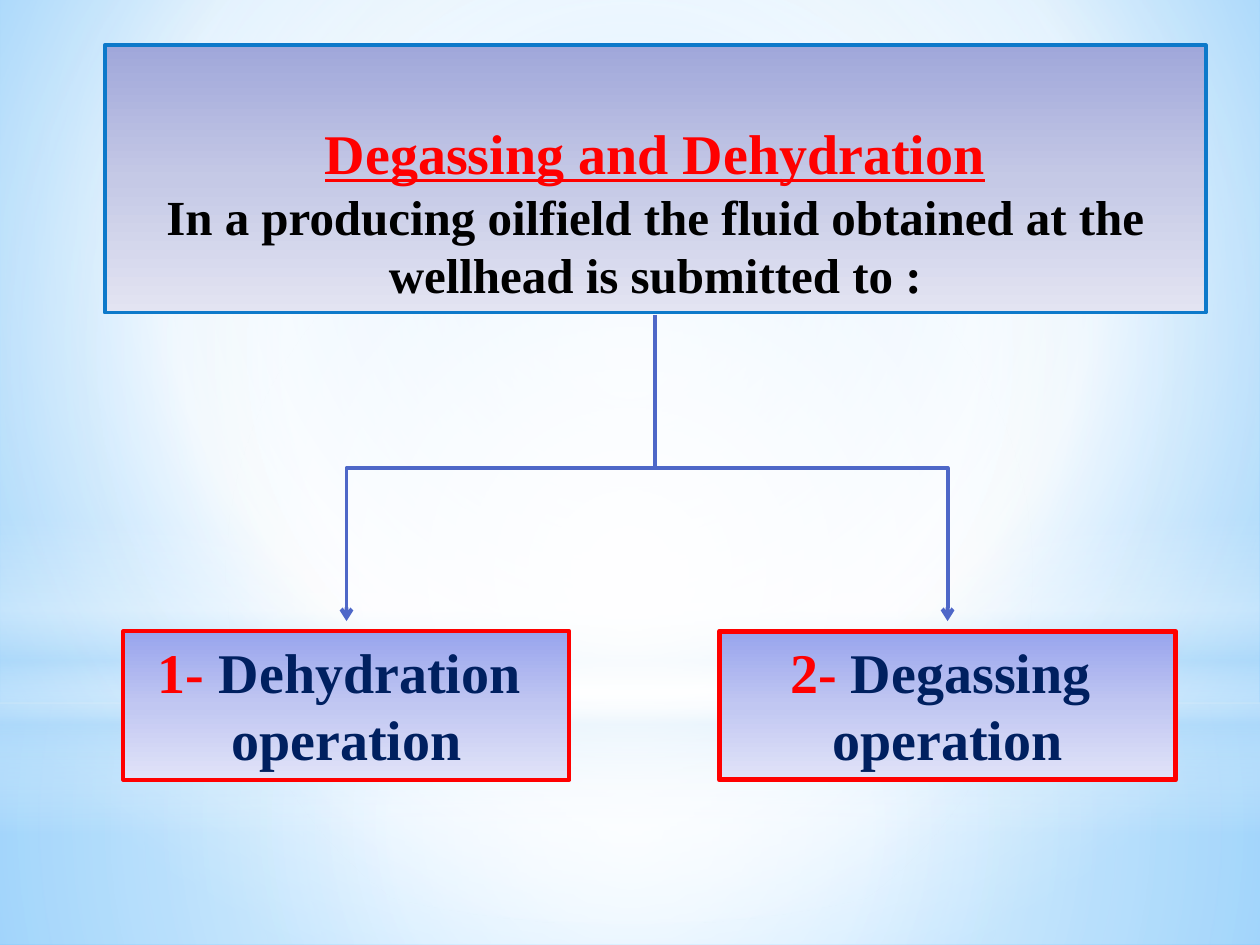
from lxml.etree import SubElement
from pptx import Presentation
from pptx.dml.color import RGBColor
from pptx.enum.shapes import MSO_CONNECTOR, MSO_SHAPE
from pptx.enum.text import MSO_ANCHOR, MSO_AUTO_SIZE, PP_ALIGN
from pptx.oxml.ns import qn
from pptx.util import Inches, Pt

SLIDE_WIDTH, SLIDE_HEIGHT = Inches(10), Inches(7.5)
COLUMNS, ROWS = 100, 75
FONT = "Times New Roman"

WHITE = RGBColor(0xFF, 0xFF, 0xFF)
BLACK = RGBColor(0x00, 0x00, 0x00)
RED = RGBColor(0xFF, 0x00, 0x00)
NAVY = RGBColor(0x00, 0x20, 0x60)
SKY = RGBColor(0x9E, 0xD5, 0xFF)
DEEP_SKY = RGBColor(0x5B, 0xB9, 0xFF)
PALE_BLUE = RGBColor(0xB4, 0xDC, 0xFA)
TITLE_BORDER = RGBColor(0x0D, 0x79, 0xCA)
ARROW_BLUE = RGBColor(0x4E, 0x67, 0xC8)

TITLE_STOPS = [(0, RGBColor(0xA0, 0xA7, 0xDA)), (50, RGBColor(0xC5, 0xC9, 0xE6)),
               (100, RGBColor(0xE3, 0xE4, 0xF2))]
OPERATION_STOPS = [(0, RGBColor(0x98, 0xA4, 0xED)), (50, RGBColor(0xC1, 0xC7, 0xF2)),
                   (100, RGBColor(0xE1, 0xE3, 0xF8))]
BACKGROUND_STOPS = [(0, SKY), (60, WHITE), (100, DEEP_SKY)]
CENTRE = (50, 50, 50, 50)
BACKDROPS = [
    (MSO_SHAPE.RECTANGLE, (0, 55.8, 100, 19.2), CENTRE,
     [(0, WHITE, 91), (37, WHITE, 76), (100, PALE_BLUE, 79)]),
    (MSO_SHAPE.RECTANGLE, (0, 0, 100, 55.8), CENTRE,
     [(0, WHITE, 89), (48, WHITE, 62), (100, PALE_BLUE, 79)]),
    (MSO_SHAPE.RECTANGLE, (0, 41.2, 100, 25), None,
     [(0, WHITE, 0), (29, WHITE, 30), (45, PALE_BLUE, 40),
      (55, WHITE, 26), (65, PALE_BLUE, 60), (100, WHITE, 0)]),
    (MSO_SHAPE.OVAL, (0, 17.5, 100, 55.8), CENTRE,
     [(0, WHITE, 100), (56, WHITE, 0)]),
]
TITLE_AREA = (8.3, 3.6, 87.4, 21.2)
OPERATIONS = [
    ("2-", " Degassing ", (57.1, 50.1, 36.2, 11.8), 3),
    ("1-", " Dehydration ", (9.8, 50.1, 35.4, 11.8), 2.25),
]
ARROW_START, ARROW_END = (52, 25), 49.3


def column(count):
    return round(SLIDE_WIDTH * count / COLUMNS)


def row(count):
    return round(SLIDE_HEIGHT * count / ROWS)


def place(area):
    left, top, width, height = area
    return column(left), row(top), column(width), row(height)


def set_gradient(fill, owner, stops, focus=None):
    fill.solid()
    solid = next(owner.iter(qn("a:solidFill")))
    gradient = solid.makeelement(qn("a:gradFill"), {"rotWithShape": "1"})
    stop_list = SubElement(gradient, qn("a:gsLst"))
    for position, color, *opacity in stops:
        stop = SubElement(stop_list, qn("a:gs"), pos=str(position * 1000))
        stop_color = SubElement(stop, qn("a:srgbClr"), val=str(color))
        if opacity:
            SubElement(stop_color, qn("a:alpha"), val=str(opacity[0] * 1000))
    if focus:
        circle = SubElement(gradient, qn("a:path"), {"path": "circle"})
        sides = {side: str(share * 1000) for side, share in zip("ltrb", focus)}
        SubElement(circle, qn("a:fillToRect"), sides)
    else:
        SubElement(gradient, qn("a:lin"), ang="5400000", scaled="0")
    solid.getparent().replace(solid, gradient)


def add_backdrop(slide, kind, area, focus, stops):
    shape = slide.shapes.add_shape(kind, *place(area))
    shape.shadow.inherit = False
    shape.line.fill.background()
    set_gradient(shape.fill, shape._element.spPr, stops, focus)


def style_box(shape, stops, border, border_width):
    set_gradient(shape.fill, shape._element.spPr, stops)
    shape.line.color.rgb = border
    shape.line.width = Pt(border_width)
    frame = shape.text_frame
    frame.word_wrap = True
    frame.auto_size = MSO_AUTO_SIZE.SHAPE_TO_FIT_TEXT
    frame.vertical_anchor = MSO_ANCHOR.TOP


def add_run(paragraph, text, size, color, underline=False):
    paragraph.alignment = PP_ALIGN.CENTER
    run = paragraph.add_run()
    run.text = text
    run.font.name = FONT
    run.font.size = Pt(size)
    run.font.bold = True
    run.font.underline = underline
    run.font.color.rgb = color


def add_title(slide):
    title = slide.shapes.title
    slide.shapes._spTree.append(title._element)
    title.left, title.top, title.width, title.height = place(TITLE_AREA)
    style_box(title, TITLE_STOPS, TITLE_BORDER, 2.25)
    heading = title.text_frame.paragraphs[0]
    heading.line_spacing = 2.0
    add_run(heading, "Degassing and Dehydration", 32, RED, True)
    add_run(title.text_frame.add_paragraph(),
            "In a producing oilfield the fluid obtained at the wellhead is submitted to :",
            28, BLACK)


def add_operation(slide, number, name, area, border_width):
    box = slide.shapes.add_shape(MSO_SHAPE.RECTANGLE, *place(area))
    box.shadow.inherit = False
    style_box(box, OPERATION_STOPS, RED, border_width)
    first = box.text_frame.paragraphs[0]
    add_run(first, number, 32, RED)
    add_run(first, name, 32, NAVY)
    add_run(box.text_frame.add_paragraph(), "operation", 32, NAVY)


def add_elbow_arrow(slide, target):
    start_x, start_y = column(ARROW_START[0]), row(ARROW_START[1])
    end_x, end_y = column(target), row(ARROW_END)
    length, breadth = end_y - start_y, abs(end_x - start_x)
    left = (start_x + end_x - length) // 2
    top = (start_y + end_y - breadth) // 2
    arrow = slide.shapes.add_connector(
        MSO_CONNECTOR.ELBOW, left, top, left + length, top + breadth)
    arrow.line.color.rgb = ARROW_BLUE
    arrow.line.width = Pt(2.25)
    properties = arrow._element.spPr
    transform = properties.find(qn("a:xfrm"))
    if end_x > start_x:
        transform.set("rot", "16200000")
        transform.set("flipH", "1")
    else:
        transform.set("rot", "5400000")
    SubElement(properties.find(qn("a:ln")), qn("a:tailEnd"), type="arrow")
    SubElement(properties, qn("a:effectLst"))


def main():
    presentation = Presentation()
    presentation.slide_width, presentation.slide_height = SLIDE_WIDTH, SLIDE_HEIGHT
    slide = presentation.slides.add_slide(presentation.slide_layouts[5])
    set_gradient(slide.background.fill, slide._element.cSld, BACKGROUND_STOPS,
                 (20, 10, 20, 60))
    for kind, area, focus, stops in BACKDROPS:
        add_backdrop(slide, kind, area, focus, stops)
    add_title(slide)
    for number, name, area, border_width in OPERATIONS:
        add_operation(slide, number, name, area, border_width)
    for _, _, (left, _, width, _), _ in OPERATIONS:
        add_elbow_arrow(slide, left + width / 2)
    presentation.save("out.pptx")


if __name__ == "__main__":
    main()
